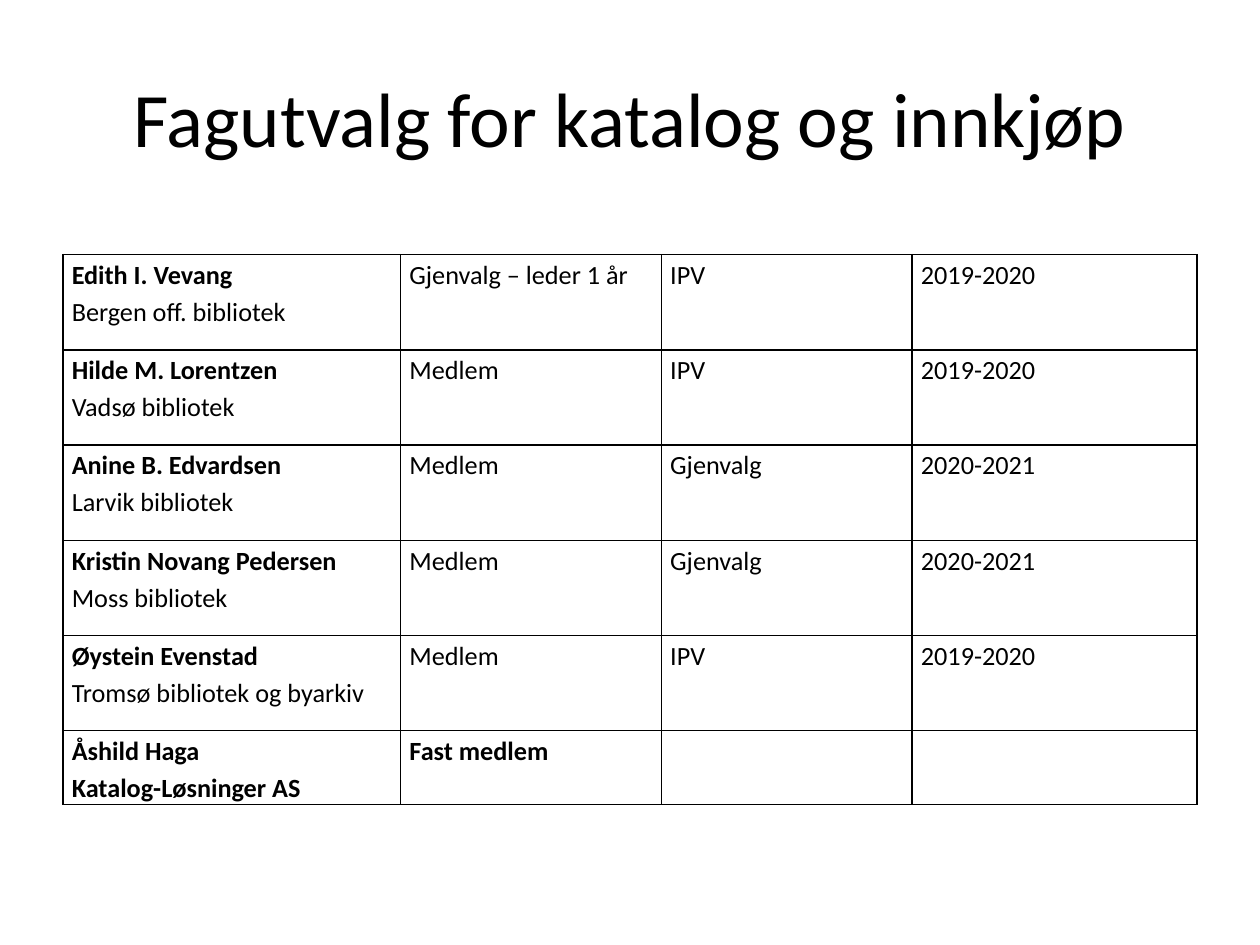
from lxml.etree import SubElement
from pptx import Presentation
from pptx.dml.color import RGBColor
from pptx.enum.text import MSO_ANCHOR as Anchor, PP_ALIGN as Align
from pptx.oxml import parse_xml
from pptx.oxml.ns import nsdecls, qn
from pptx.util import Inches, Pt

COLORS = {"ink": "000000", "paper": "FFFFFF"}
GRID_COLS, GRID_ROWS = 100, 75
COL_WIDTHS = [26.8, 20.7, 19.9, 22.6]
ROW_HEIGHT, LAST_ROW_HEIGHT = 7.56, 5.6

MEMBERS = [
    ("Edith I. Vevang", "Bergen off. bibliotek", "Gjenvalg – leder 1 år", "IPV", "2019-2020"),
    ("Hilde M. Lorentzen", "Vadsø bibliotek", "Medlem", "IPV", "2019-2020"),
    ("Anine B. Edvardsen", "Larvik bibliotek", "Medlem", "Gjenvalg", "2020-2021"),
    ("Kristin Novang Pedersen", "Moss bibliotek", "Medlem", "Gjenvalg", "2020-2021"),
    ("Øystein Evenstad", "Tromsø bibliotek og byarkiv", "Medlem", "IPV", "2019-2020"),
]
PERMANENT = ("Åshild Haga", "Katalog-Løsninger AS", "Fast medlem")


class Deck:
    def __init__(self):
        self.prs = Presentation()
        self.prs.slide_width, self.prs.slide_height = Inches(10), Inches(7.5)
        self.s = self.prs.slides.add_slide(self.prs.slide_layouts[5])
        fill = self.s.background.fill
        fill.solid()
        fill.fore_color.rgb = RGBColor.from_string(COLORS["paper"])

    def x(self, cols):
        return round(self.prs.slide_width * cols / GRID_COLS)

    def y(self, rows):
        return round(self.prs.slide_height * rows / GRID_ROWS)

    def style(self, font, size, bold=False):
        formats = {"name": "Calibri", "size": Pt(size), "bold": bold}
        for key, value in formats.items():
            setattr(font, key, value)
        font.color.rgb = RGBColor.from_string(COLORS["ink"])

    def title(self, text, col, row, cols, rows):
        sp = self.s.shapes.title
        box = {"left": self.x(col), "top": self.y(row),
               "width": self.x(cols), "height": self.y(rows)}
        for key, value in box.items():
            setattr(sp, key, value)
        tf = sp.text_frame
        tf.vertical_anchor = Anchor.MIDDLE
        p = tf.paragraphs[0]
        p.alignment = Align.CENTER
        r = p.add_run()
        r.text = text
        self.style(r.font, 44)

    def table(self, col, row, widths, heights):
        table = self.s.shapes.add_table(
            len(heights), len(widths), self.x(col), self.y(row),
            self.x(sum(widths)), self.y(sum(heights))).table
        table.first_row = table.horz_banding = False
        for column, width in zip(table.columns, widths):
            column.width = self.x(width)
        for line, height in zip(table.rows, heights):
            line.height = self.y(height)
        for cell in table.iter_cells():
            self.frame(cell)
        return table

    def frame(self, cell):
        """Give the cell its margins, four thin borders and no fill."""
        margins = {"margin_left": 0.07, "margin_right": 0.07, "margin_top": 0, "margin_bottom": 0}
        for key, value in margins.items():
            setattr(cell, key, Inches(value))
        tcPr = cell._tc.get_or_add_tcPr()
        for side in "LRTB":
            ln = parse_xml(f'<a:ln{side} {nsdecls("a")} w="{Pt(1)}"/>')
            color = SubElement(SubElement(ln, qn("a:solidFill")), qn("a:srgbClr"))
            color.set("val", COLORS["ink"])
            tcPr.append(ln)
        cell.fill.background()

    def add_text(self, p, *runs):
        """Put (text, bold) runs into one paragraph, a line break between them."""
        p.line_spacing = 1.15
        for i, (text, bold) in enumerate(runs):
            if i:
                p.add_line_break()
            r = p.add_run()
            r.text = text
            self.style(r.font, 15, bold)


def main():
    deck = Deck()
    deck.title("Fagutvalg for katalog og innkjøp", 5, 3, 90, 12.5)
    heights = [ROW_HEIGHT] * len(MEMBERS) + [LAST_ROW_HEIGHT]
    table = deck.table(5, 20.2, COL_WIDTHS, heights)

    for i, (name, library, *details) in enumerate(MEMBERS):
        deck.add_text(table.cell(i, 0).text_frame.paragraphs[0], (name, True), (library, False))
        for j, text in enumerate(details, 1):
            deck.add_text(table.cell(i, j).text_frame.paragraphs[0], (text, False))

    last = len(MEMBERS)
    name, company, role = PERMANENT
    tf = table.cell(last, 0).text_frame
    deck.add_text(tf.paragraphs[0], (name, True))
    deck.add_text(tf.add_paragraph(), (company, True))
    deck.add_text(table.cell(last, 1).text_frame.paragraphs[0], (role, True))

    deck.prs.save("out.pptx")


if __name__ == "__main__":
    main()
